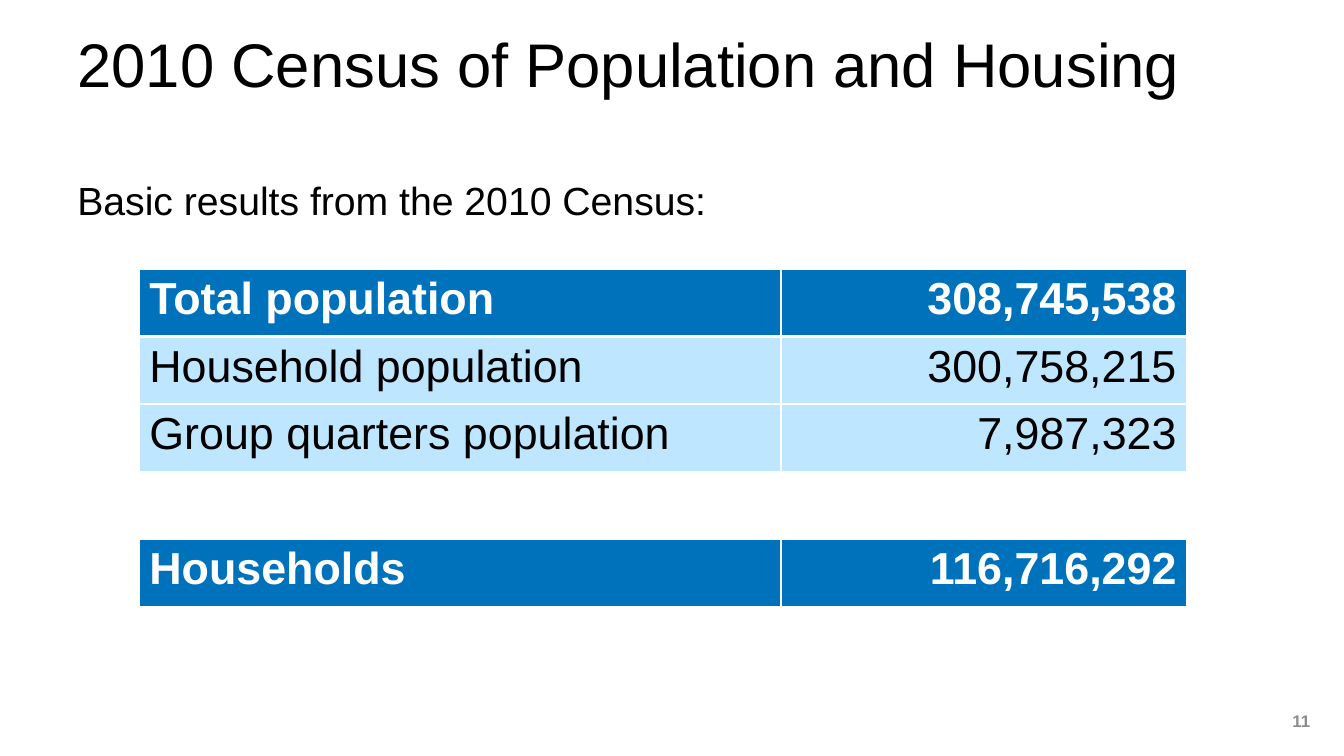
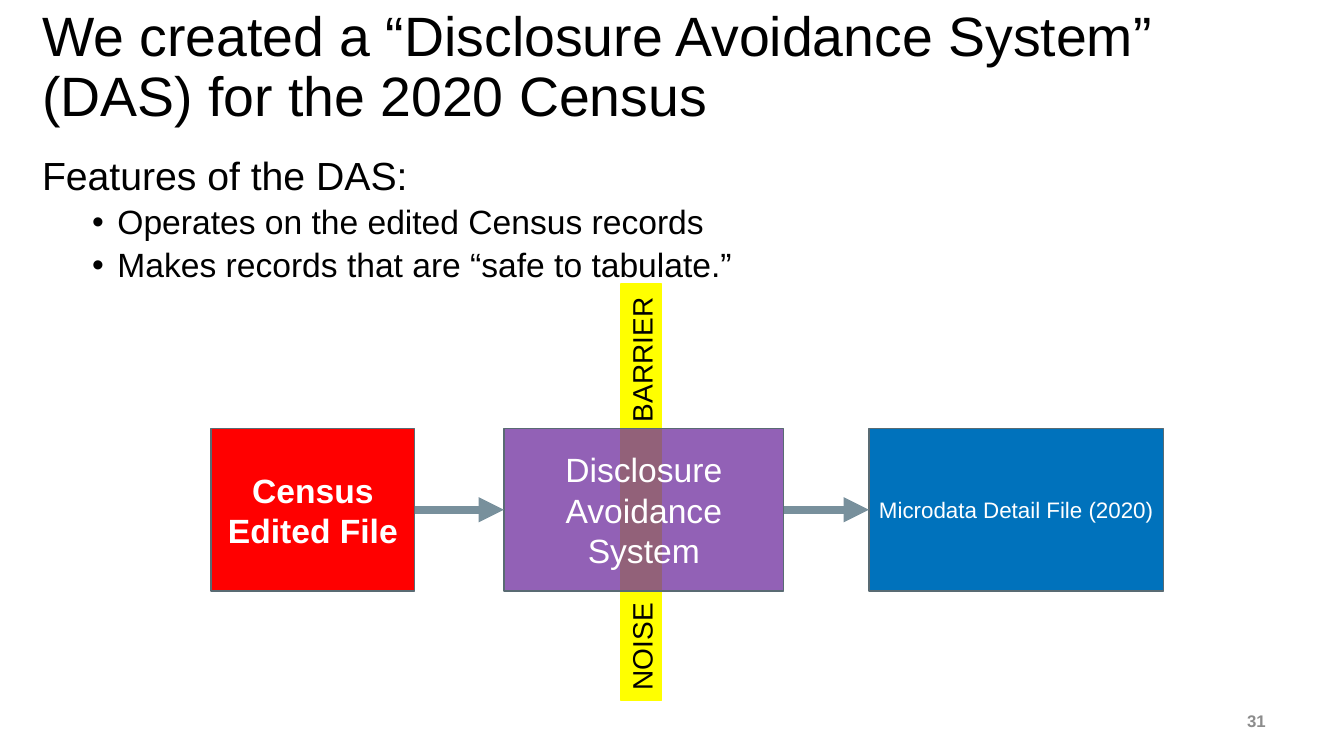
"""Build two census slides: the 2010 results and the avoidance system."""
from dataclasses import dataclass

from lxml.etree import SubElement as Sub
from pptx import Presentation
from pptx.dml.color import RGBColor as Rgb
from pptx.enum.shapes import MSO_CONNECTOR as Link, MSO_SHAPE as Form
from pptx.enum.text import MSO_ANCHOR as Anchor, PP_ALIGN as Align
from pptx.oxml.ns import qn
from pptx.util import Cm, Pt


@dataclass(frozen=True)
class Theme:
    """Colours and type sizes."""
    font: str = "Arial"
    black: str = "000000"
    white: str = "FFFFFF"
    grey: str = "8C8C8C"
    blue: str = "0072BC"
    pale: str = "BFE6FF"
    red: str = "FF0000"
    purple: str = "7030A0"
    yellow: str = "FFFF00"
    edge: str = "596B73"
    arrow: str = "78909C"
    title: float = 44
    tight: float = 39.6
    cell: float = 32
    body: float = 28
    item: float = 24
    wall: float = 20
    small: float = 16
    page: float = 12


T = Theme()

CENSUS = {
    "title": "2010 Census of Population and Housing",
    "title_box": (1.7, 0, 30.48, 3.4), "size": T.title,
    "lead": "Basic results from the 2010 Census:",
    "body_box": (1.7, 4.45, 30.48, 12.27), "items": [],
    "page": "11", "page_box": (25.65, 17.65, 7.62, 1.02),
}
SYSTEM = {
    "title": "We created a “Disclosure Avoidance System” (DAS) for the 2020 Census",
    "title_box": (0.81, 0.51, 32.44, 2.44), "size": T.tight,
    "lead": "Features of the DAS:",
    "body_box": (0.81, 3.81, 32.44, 13.36),
    "items": ["Operates on the edited Census records",
              "Makes records that are “safe to tabulate.”"],
    "page": "31", "page_box": (26.87, 17.65, 5.28, 1.02),
}
COUNTS = [
    ("Total population", "308,745,538", "head"),
    ("Household population", "300,758,215", "part"),
    ("Group quarters population", "7,987,323", "part"),
    ("", "", "gap"),
    ("Households", "116,716,292", "head"),
]
LOOKS = {"head": (T.blue, T.white, True), "part": (T.pale, T.black, False),
         "gap": (T.white, T.black, False)}
TABLE = (3.51, 6.78)
COLS, ROW = (16.17, 10.23), 1.7
STEPS = [
    ("Census Edited File", 5.32, 5.13, T.red, T.item, True, None),
    ("Disclosure Avoidance System", 12.7, 7.05, T.purple, T.item, False, 76),
    ("Microdata Detail File (2020)", 21.9, 7.42, T.blue, T.small, False, None),
]
TOP, TALL = 10.8, 4.09
WALL = ("NOISE\tBARRIER", (10.92, 11.89, 10.49, 1.02), 9.9)


def cm(box):
    return [Cm(n) for n in box]


def write(frame, text, size=T.body, color=T.black, bold=False, align=Align.LEFT,
          anchor=None, lead=None, before=0, bullet=None, tab=None, more=False):
    frame.word_wrap = True
    if anchor is not None:
        frame.vertical_anchor = anchor
    para = frame.add_paragraph() if more else frame.paragraphs[0]
    props = para._p.get_or_add_pPr()
    if bullet:
        props.set("marL", str(Cm(1.9)))
        props.set("indent", str(Cm(-0.64)))
        Sub(props, qn("a:buFont"), typeface=T.font)
        Sub(props, qn("a:buChar"), char=bullet)
    if tab:
        stops = Sub(props, qn("a:tabLst"))
        Sub(stops, qn("a:tab"), pos=str(Cm(tab)), algn="r")
    para.alignment = align
    if lead:
        para.line_spacing = lead
    if before:
        para.space_before = Pt(before)
    run = para.add_run()
    run.text = text
    font = run.font
    font.name, font.size, font.bold = T.font, Pt(size), bold
    font.color.rgb = Rgb.from_string(color)


def label(slide, box, text, **form):
    frame = slide.shapes.add_textbox(*cm(box)).text_frame
    write(frame, text, **form)
    return frame


def start(deck, data):
    slide = deck.slides.add_slide(deck.slide_layouts[6])
    label(slide, data["title_box"], data["title"], size=data["size"],
          anchor=Anchor.MIDDLE, lead=0.9)
    frame = label(slide, data["body_box"], data["lead"], lead=0.9)
    for item in data["items"]:
        write(frame, item, size=T.item, lead=0.9, before=5, bullet="•", more=True)
    label(slide, data["page_box"], data["page"], size=T.page, color=T.grey,
          bold=True, align=Align.RIGHT, anchor=Anchor.MIDDLE)
    return slide


def block(slide, box, fill, edge, alpha=None):
    shape = slide.shapes.add_shape(Form.RECTANGLE, *cm(box))
    shape.shadow.inherit = False
    shape.fill.solid()
    shape.fill.fore_color.rgb = Rgb.from_string(fill)
    if alpha:
        tint = shape._element.spPr.find(".//" + qn("a:srgbClr"))
        Sub(tint, qn("a:alpha"), val=str(alpha * 1000))
    shape.line.color.rgb = Rgb.from_string(edge)
    shape.line.width = Pt(1)
    return shape


def border(cell, widths):
    props = cell._tc.get_or_add_tcPr()
    for spot, (side, width) in enumerate(widths.items()):
        line = Sub(props, qn("a:ln" + side), w=str(Pt(width)))
        Sub(Sub(line, qn("a:solidFill")), qn("a:srgbClr"), val=T.white)
        props.insert(spot, line)


def counts(slide):
    size = (sum(COLS), ROW * len(COUNTS))
    grid = slide.shapes.add_table(len(COUNTS), len(COLS), *cm(TABLE + size)).table
    grid.horz_banding = False
    for col, width in zip(grid.columns, COLS):
        col.width = Cm(width)
    for row, (name, count, look) in enumerate(COUNTS):
        fill, ink, bold = LOOKS[look]
        for col, text in enumerate((name, count)):
            cell = grid.cell(row, col)
            cell.fill.solid()
            cell.fill.fore_color.rgb = Rgb.from_string(fill)
            border(cell, {"L": 1, "R": 1, "T": 3 if row == 1 else 1,
                          "B": 3 if row == 0 else 1})
            if text:
                write(cell.text_frame, text, size=T.cell, color=ink, bold=bold,
                      align=Align.RIGHT if col else Align.LEFT)


def arrow(slide, left, right, y):
    line = slide.shapes.add_connector(Link.STRAIGHT, *cm((left, y, right, y)))
    line.line.color.rgb = Rgb.from_string(T.arrow)
    line.line.width = Pt(6)
    Sub(line.line._get_or_add_ln(), qn("a:tailEnd"), type="triangle")
    Sub(line._element.spPr, qn("a:effectLst"))


def flow(slide):
    text, box, tab = WALL
    wall = block(slide, box, T.yellow, T.yellow)
    wall.rotation = 270
    write(wall.text_frame, text, size=T.wall, anchor=Anchor.MIDDLE, tab=tab)
    for text, left, wide, fill, size, bold, alpha in STEPS:
        step = block(slide, (left, TOP, wide, TALL), fill, T.edge, alpha)
        write(step.text_frame, text, size=size, color=T.white, bold=bold,
              align=Align.CENTER, anchor=Anchor.MIDDLE)
    for here, there in zip(STEPS, STEPS[1:]):
        arrow(slide, here[1] + here[2], there[1], TOP + TALL / 2)


def main():
    deck = Presentation()
    deck.slide_width, deck.slide_height = Cm(33.87), Cm(19.05)
    counts(start(deck, CENSUS))
    flow(start(deck, SYSTEM))
    deck.save("out.pptx")


if __name__ == "__main__":
    main()
